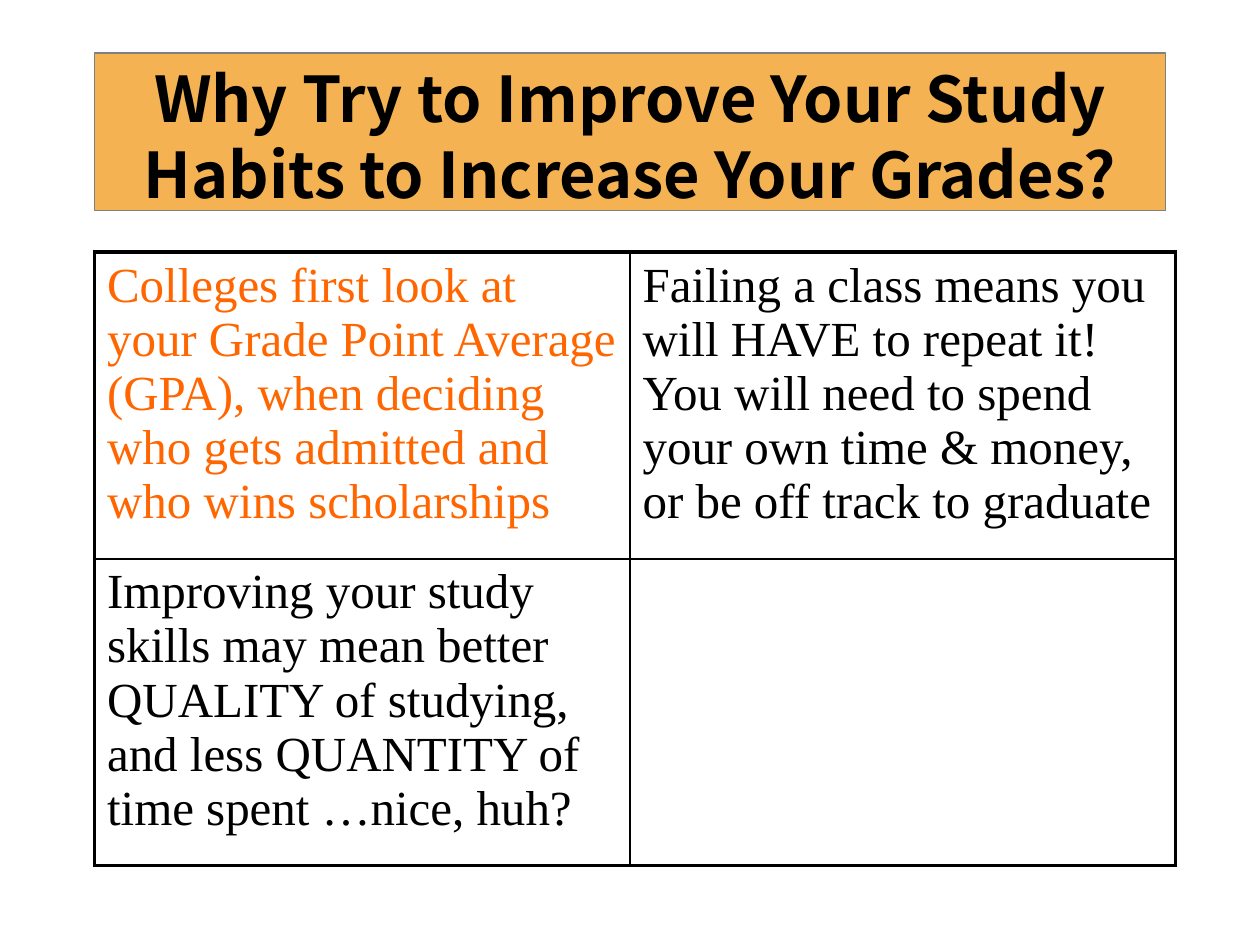
from lxml import etree
from pptx import Presentation
from pptx import util as u
from pptx.dml.color import RGBColor
from pptx.enum import text
from pptx.oxml.ns import qn

COLORS = {"banner": "F4B252", "edge": "808080", "ink": "000000", "accent": "FF6600"}
REASONS = [
    ["Colleges first look at your Grade Point Average (GPA), when deciding who gets admitted "
     "and who wins scholarships",
     "Failing a class means you will HAVE to repeat it! You will need to spend your own time "
     "& money, or be off track to graduate"],
    ["Improving your study skills may mean better QUALITY of studying, and less QUANTITY of "
     "time spent …nice, huh?",
     ""],
]


def rgb(name):
    return RGBColor.from_string(COLORS[name])


class StudySlide:
    heading_font, body_font = "Noto Sans CJK KR", "Times New Roman"
    outer, inner = 2.25, 1

    def __init__(self, deck):
        self.width, self.height = deck.slide_width, deck.slide_height
        self.slide = deck.slides.add_slide(deck.slide_layouts[5])

    def box(self, left, top, width, height):
        return (round(left * self.width), round(top * self.height),
                round(width * self.width), round(height * self.height))

    def style(self, paragraph, font, size, color, bold=False):
        for run in paragraph.runs:
            run.font.name, run.font.size, run.font.bold = font, u.Pt(size), bold
            run.font.color.rgb = rgb(color)

    def title(self, wording, *share):
        banner = self.slide.shapes.title
        banner.left, banner.top, banner.width, banner.height = self.box(*share)
        banner.fill.solid()
        banner.fill.fore_color.rgb = rgb("banner")
        banner.line.color.rgb = rgb("edge")
        banner.line.width = u.Pt(0.75)
        frame = banner.text_frame
        frame.text = wording
        frame.auto_size = text.MSO_AUTO_SIZE.NONE
        frame.vertical_anchor = text.MSO_ANCHOR.MIDDLE
        frame.margin_top, frame.margin_bottom = u.Inches(0.06), 0
        heading = frame.paragraphs[0]
        heading.alignment = text.PP_ALIGN.CENTER
        heading.line_spacing = u.Pt(43.5)
        self.style(heading, self.heading_font, 36, "ink", bold=True)

    def border(self, cell, side, points):
        line = etree.SubElement(cell._tc.get_or_add_tcPr(), qn(f"a:{side}"), w=str(u.Pt(points)))
        fill = etree.SubElement(line, qn("a:solidFill"))
        etree.SubElement(fill, qn("a:srgbClr"), val=COLORS["ink"])

    def table(self, rows, column_shares, *share):
        last_row, last_col = len(rows) - 1, len(rows[0]) - 1
        grid = self.slide.shapes.add_table(len(rows), len(rows[0]), *self.box(*share)).table
        grid.first_row = grid.horz_banding = False
        for column, part in zip(grid.columns, column_shares):
            column.width = round(part * self.width)
        for r, row in enumerate(rows):
            for c, reason in enumerate(row):
                cell = grid.cell(r, c)
                edges = {"lnL": c == 0, "lnR": c == last_col, "lnT": r == 0, "lnB": r == last_row}
                for side, outside in edges.items():
                    self.border(cell, side, self.outer if outside else self.inner)
                cell.fill.background()
                cell.text_frame.text = reason
                self.style(cell.text_frame.paragraphs[0], self.body_font, 28,
                           "accent" if r == c == 0 else "ink")


def main():
    deck = Presentation()
    deck.slide_width, deck.slide_height = u.Inches(10), u.Inches(7.5)
    page = StudySlide(deck)
    page.title("Why Try to Improve Your Study Habits to Increase Your Grades?",
               0.075, 0.42 / 7.5, 0.85, 1.25 / 7.5)
    page.table(REASONS, (0.425, 0.433), 0.075, 2 / 7.5, 0.858, 4.87 / 7.5)
    deck.save("out.pptx")


if __name__ == "__main__":
    main()
